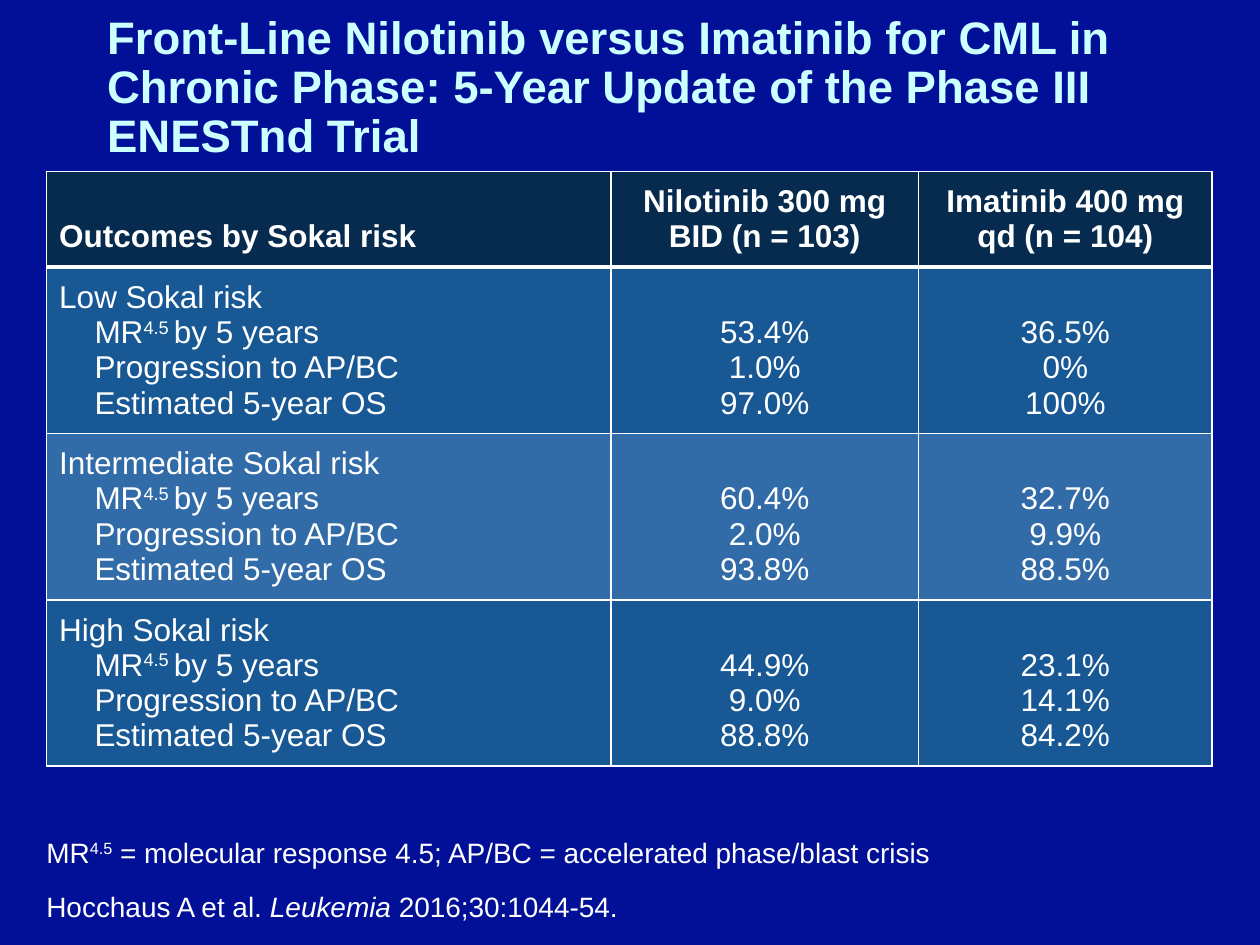
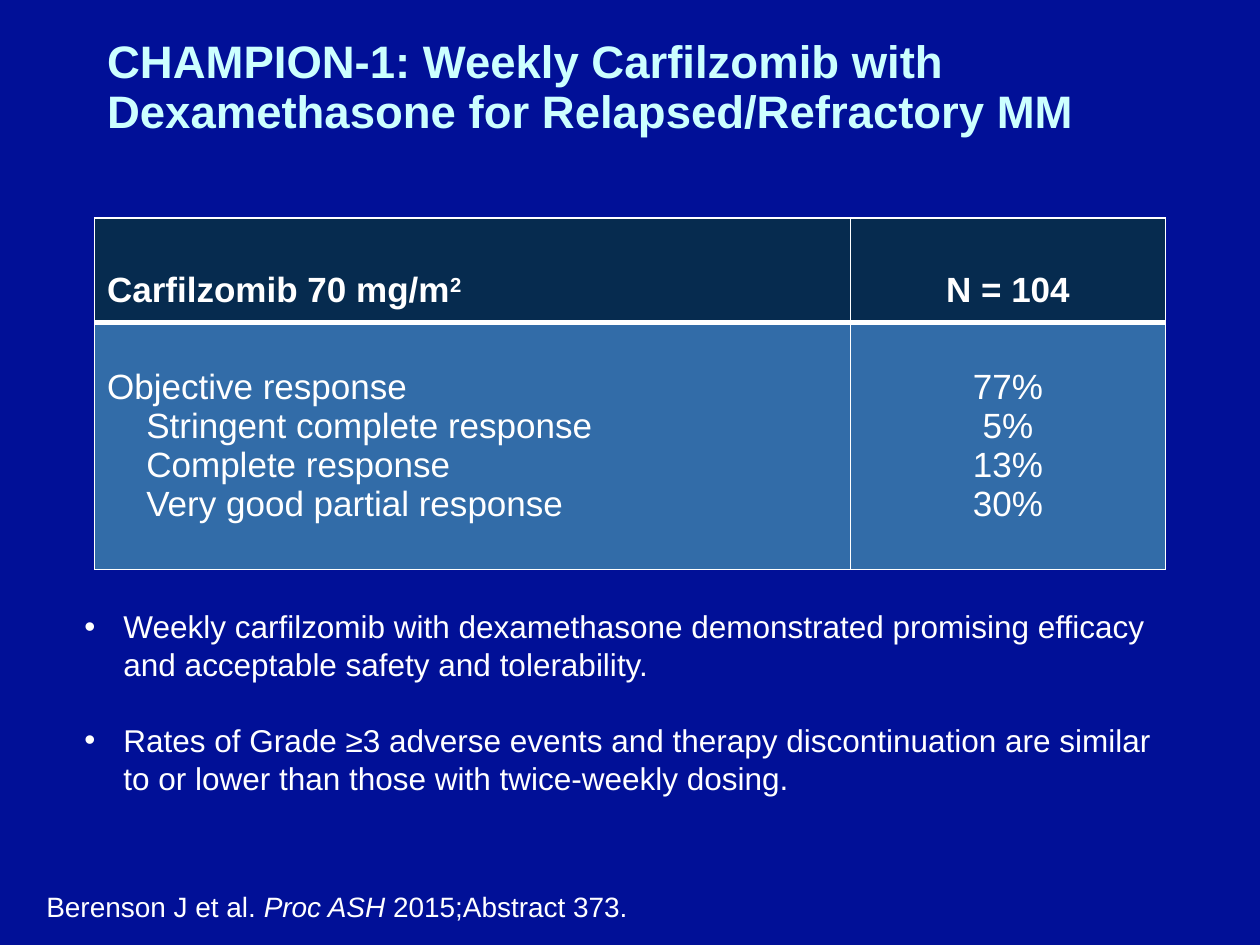
from pptx import Presentation
from pptx.dml.color import RGBColor
from pptx.enum.text import MSO_ANCHOR, MSO_AUTO_SIZE, PP_ALIGN
from pptx.oxml.ns import qn
from pptx.util import Inches, Pt
from lxml import etree

LEFT, CENTER = PP_ALIGN.LEFT, PP_ALIGN.CENTER
MIDDLE, BOTTOM = MSO_ANCHOR.MIDDLE, MSO_ANCHOR.BOTTOM
NO_FIT = MSO_AUTO_SIZE.NONE

FONT = "Arial"
COLORS = {
    "background": "011097",
    "title": "CCFFFF",
    "text": "FFFFFF",
    "header": "062B4F",
    "dark row": "175895",
    "light row": "326CA8",
}
TITLE_ONLY, TITLE_AND_BODY = 5, 1  # layouts of the default template
CELL_INSET = 0.1

# ---- Content: a line is a list of (text, style) spans or a plain string ----
SUPER, ITALIC = "superscript", "italic"
OUTCOMES = [
    [("MR", None), ("4.5 ", SUPER), ("by 5 years", None)],
    "Progression to AP/BC",
    "Estimated 5-year OS",
]

SOKAL = {
    "title": "Front-Line Nilotinib versus Imatinib for CML in Chronic Phase: "
             "5-Year Update of the Phase III ENESTnd Trial",
    "table": {
        "place": (0.37, 1.36),
        "size": 18,
        "columns": [4.48, 2.44, 2.33],
        "rows": [0.76, 1.32, 1.32, 1.32],
        "header": ["Outcomes by Sokal risk", "Nilotinib 300 mg BID (n = 103)",
                   "Imatinib 400 mg qd (n = 104)"],
        "groups": [
            ("dark row", ["Low Sokal risk", *OUTCOMES],
             ["53.4%", "1.0%", "97.0%"], ["36.5%", "0%", "100%"]),
            ("light row", ["Intermediate Sokal risk", *OUTCOMES],
             ["60.4%", "2.0%", "93.8%"], ["32.7%", "9.9%", "88.5%"]),
            ("dark row", ["High Sokal risk", *OUTCOMES],
             ["44.9%", "9.0%", "88.8%"], ["23.1%", "14.1%", "84.2%"]),
        ],
    },
    "bullets": [],
    "notes": [
        (6.58, [("MR", None), ("4.5", SUPER),
                (" = molecular response 4.5; AP/BC = accelerated phase/blast crisis", None)]),
        (7.01, [("Hocchaus A et al. ", None), ("Leukemia", ITALIC),
                (" 2016;30:1044-54.", None)]),
    ],
}

CHAMPION = {
    "title": "CHAMPION-1: Weekly Carfilzomib with Dexamethasone "
             "for Relapsed/Refractory MM",
    "table": {
        "place": (0.75, 1.73),
        "size": 20,
        "columns": [6.0, 2.5],
        "rows": [0.83, 1.96],
        "header": [[("Carfilzomib 70 mg/m", None), ("2", SUPER)], "N = 104"],
        "groups": [
            ("light row",
             ["Objective response", "Stringent complete response",
              "Complete response", "Very good partial response"],
             ["77%", "5%", "13%", "30%"]),
        ],
    },
    "bullets": [
        "Weekly carfilzomib with dexamethasone demonstrated promising efficacy "
        "and acceptable safety and tolerability.",
        "Rates of Grade ≥3 adverse events and therapy discontinuation are similar "
        "to or lower than those with twice-weekly dosing.",
    ],
    "notes": [
        (7.01, [("Berenson J et al. ", None), ("Proc ASH ", ITALIC),
                ("2015;Abstract 373.", None)]),
    ],
}


# ---- Text ----
def color(name):
    return RGBColor.from_string(COLORS[name])


def write_line(para, line, size, bold=False, ink="text", align=LEFT):
    para.alignment = align
    font = para.font
    font.name, font.size, font.bold = FONT, Pt(size), bold
    font.color.rgb = color(ink)
    for text, style in [(line, None)] if isinstance(line, str) else line:
        span = para.add_run()
        span.text = text
        if style == ITALIC:
            span.font.italic = True
        elif style == SUPER:
            span._r.get_or_add_rPr().set("baseline", "30000")


def write_lines(frame, lines, size, **look):
    frame.word_wrap = True
    for number, line in enumerate(lines):
        para = frame.add_paragraph() if number else frame.paragraphs[0]
        write_line(para, line, size, **look)
    return frame.paragraphs


def set_indent(para, left, first=0.0):
    properties = para._p.get_or_add_pPr()
    properties.set("marL", str(Inches(left)))
    properties.set("indent", str(Inches(first)))
    return properties


def place(shape, left, top, width, height):
    shape.left, shape.top = Inches(left), Inches(top)
    shape.width, shape.height = Inches(width), Inches(height)


# ---- Table ----
def set_borders(cell, top, bottom):
    properties = cell._tc.get_or_add_tcPr()
    sides = [("lnL", 1), ("lnR", 1), ("lnT", top), ("lnB", bottom)]
    for position, (side, points) in enumerate(sides):
        line = etree.Element(qn(f"a:{side}"), w=str(Pt(points)))
        fill = etree.SubElement(line, qn("a:solidFill"))
        etree.SubElement(fill, qn("a:srgbClr"), val=COLORS["text"])
        properties.insert(position, line)


def add_results_table(slide, spec):
    left, top = spec["place"]
    columns, rows, size = spec["columns"], spec["rows"], spec["size"]
    step = size * 1.12 / 72  # one text line, also the indent of sub-items
    table = slide.shapes.add_table(
        len(rows), len(columns), Inches(left), Inches(top),
        Inches(sum(columns)), Inches(sum(rows))).table
    for column, width in zip(table.columns, columns):
        column.width = Inches(width)
    for row, height in zip(table.rows, rows):
        row.height = Inches(height)

    header = ("header", *([text] for text in spec["header"]))
    for row, (fill, *entries) in enumerate([header, *spec["groups"]]):
        is_header = row == 0
        for column, lines in enumerate(entries):
            cell = table.cell(row, column)
            cell.fill.solid()
            cell.fill.fore_color.rgb = color(fill)
            set_borders(cell, top=3 if row == 1 else 1, bottom=3 if is_header else 1)
            cell.vertical_anchor = BOTTOM if is_header else MIDDLE
            cell.margin_left = cell.margin_right = cell.margin_bottom = Inches(CELL_INSET)
            # Values start beside the first sub-item when the group has no own value
            skipped = len(entries[0]) - len(lines)
            cell.margin_top = Inches(CELL_INSET + skipped * step)
            paras = write_lines(cell.text_frame, lines, size, bold=is_header,
                                align=CENTER if column else LEFT)
            if column == 0:
                for para in paras[1:]:
                    set_indent(para, step)


# ---- Slide parts ----
def add_title(slide, text):
    title = slide.shapes.title
    place(title, 0.75, 0, 8.5, 1.41)
    frame = title.text_frame
    frame.auto_size, frame.vertical_anchor = NO_FIT, MIDDLE
    para, = write_lines(frame, [text], 26, bold=True, ink="title")
    para.line_spacing = 0.9


def add_bullets(slide, bullets):
    body = slide.placeholders[1]
    place(body, 0.57, 4.77, 8.89, 1.62)
    body.text_frame.auto_size = NO_FIT
    for para in write_lines(body.text_frame, bullets, 18):
        para.space_before, para.space_after = Pt(0), Pt(21.6)
        properties = set_indent(para, 0.31, -0.31)
        etree.SubElement(properties, qn("a:buFont"), typeface=FONT)
        etree.SubElement(properties, qn("a:buChar"), char="•")
        # Bullet marks come before the default run properties
        properties.append(properties.find(qn("a:defRPr")))


def add_note(slide, top, line):
    box = slide.shapes.add_textbox(Inches(0.27), Inches(top), Inches(9.73), Inches(0.37))
    write_lines(box.text_frame, [line], 16)


def add_slide(deck, content):
    layout = TITLE_AND_BODY if content["bullets"] else TITLE_ONLY
    slide = deck.slides.add_slide(deck.slide_layouts[layout])
    add_title(slide, content["title"])
    add_results_table(slide, content["table"])
    if content["bullets"]:
        add_bullets(slide, content["bullets"])
    for top, line in content["notes"]:
        add_note(slide, top, line)


def main():
    deck = Presentation()
    deck.slide_width, deck.slide_height = Inches(10), Inches(7.5)
    background = deck.slide_master.background.fill
    background.solid()
    background.fore_color.rgb = color("background")
    for content in (SOKAL, CHAMPION):
        add_slide(deck, content)
    deck.save("out.pptx")


if __name__ == "__main__":
    main()
